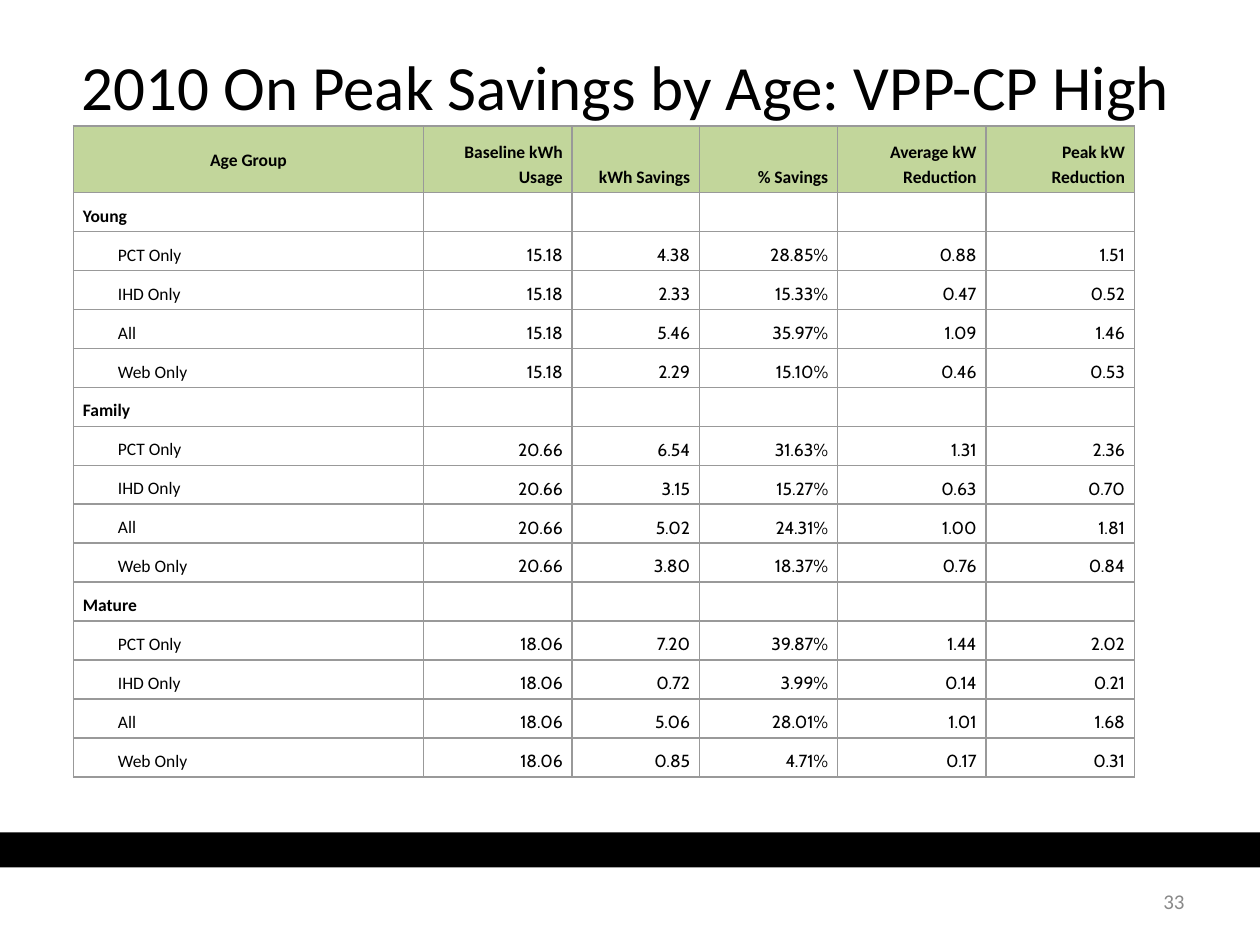
"""Build a slide with a table of on-peak savings by age group."""
from lxml import etree
from pptx import Presentation
from pptx.dml.color import RGBColor
from pptx.enum.shapes import MSO_SHAPE
from pptx.enum.text import MSO_ANCHOR, PP_ALIGN
from pptx.oxml.ns import qn
from pptx.util import Pt

LEFT, CENTER, RIGHT = PP_ALIGN.LEFT, PP_ALIGN.CENTER, PP_ALIGN.RIGHT
MIDDLE, BOTTOM = MSO_ANCHOR.MIDDLE, MSO_ANCHOR.BOTTOM
RECTANGLE = MSO_SHAPE.RECTANGLE
BLACK = RGBColor(0x00, 0x00, 0x00)
WHITE = RGBColor(0xFF, 0xFF, 0xFF)
GREEN = RGBColor(0xC2, 0xD6, 0x9B)
GRAY = RGBColor(0x89, 0x89, 0x89)
RULE = RGBColor(0x99, 0x99, 0x99)

TITLE = "2010 On Peak Savings by Age: VPP-CP High"
PAGE_NUMBER = "33"
HEADINGS = ["Age Group", "Baseline kWh Usage", "kWh Savings", "% Savings",
            "Average kW Reduction", "Peak kW Reduction"]
GROUPS = {
    "Young": [
        ("PCT Only", "15.18", "4.38", "28.85%", "0.88", "1.51"),
        ("IHD Only", "15.18", "2.33", "15.33%", "0.47", "0.52"),
        ("All", "15.18", "5.46", "35.97%", "1.09", "1.46"),
        ("Web Only", "15.18", "2.29", "15.10%", "0.46", "0.53"),
    ],
    "Family": [
        ("PCT Only", "20.66", "6.54", "31.63%", "1.31", "2.36"),
        ("IHD Only", "20.66", "3.15", "15.27%", "0.63", "0.70"),
        ("All", "20.66", "5.02", "24.31%", "1.00", "1.81"),
        ("Web Only", "20.66", "3.80", "18.37%", "0.76", "0.84"),
    ],
    "Mature": [
        ("PCT Only", "18.06", "7.20", "39.87%", "1.44", "2.02"),
        ("IHD Only", "18.06", "0.72", "3.99%", "0.14", "0.21"),
        ("All", "18.06", "5.06", "28.01%", "1.01", "1.68"),
        ("Web Only", "18.06", "0.85", "4.71%", "0.17", "0.31"),
    ],
}
COLUMN_WIDTHS = [199.9, 85, 72.8, 78.9, 84.8, 84.8]
HEADER_HEIGHT, ROW_HEIGHT = 38.1, 22.28
TEXT_SIZE = 10


def write(frame, text, size=TEXT_SIZE, font="Calibri", color=BLACK, bold=False,
          align=LEFT, spacing=None, after=None, indent=0):
    paragraph = frame.paragraphs[0]
    paragraph.alignment = align
    if spacing:
        paragraph.line_spacing = spacing
    if after:
        paragraph.space_after = Pt(after)
    if indent:
        properties = paragraph._p.get_or_add_pPr()
        properties.set("marL", str(Pt(indent)))
        properties.set("indent", "0")
    span = paragraph.add_run()
    span.text = text
    span.font.size = Pt(size)
    span.font.name = font
    span.font.bold = bold
    span.font.color.rgb = color


def add_rectangle(page, left, top, width, height, color):
    box = page.shapes.add_shape(RECTANGLE, Pt(left), Pt(top), Pt(width), Pt(height))
    box.shadow.inherit = False
    box.fill.solid()
    box.fill.fore_color.rgb = color
    box.line.fill.background()
    return box


def set_insets(frame, horizontal, vertical):
    frame.margin_left = frame.margin_right = Pt(horizontal)
    frame.margin_top = frame.margin_bottom = Pt(vertical)


def style_cell(cell, fill=None, anchor=BOTTOM):
    cell.vertical_anchor = anchor
    cell.margin_left = cell.margin_right = Pt(5.4)
    cell.margin_top = cell.margin_bottom = Pt(2.7)
    properties = cell._tc.get_or_add_tcPr()
    for side in ("a:lnL", "a:lnR", "a:lnT", "a:lnB"):
        border = etree.SubElement(properties, qn(side), w=str(Pt(1)))
        solid = etree.SubElement(border, qn("a:solidFill"))
        etree.SubElement(solid, qn("a:srgbClr"), val=str(RULE))
    if fill:
        cell.fill.solid()
        cell.fill.fore_color.rgb = fill
    else:
        cell.fill.background()


def add_savings_table(page):
    rows = []
    for group, savings in GROUPS.items():
        rows.append((group,) + ("",) * (len(HEADINGS) - 1))
        rows.extend(savings)
    height = HEADER_HEIGHT + ROW_HEIGHT * len(rows)
    table = page.shapes.add_table(len(rows) + 1, len(HEADINGS), Pt(42), Pt(72),
                                  Pt(sum(COLUMN_WIDTHS)), Pt(height)).table
    table.first_row = table.horz_banding = False
    for column, width in zip(table.columns, COLUMN_WIDTHS):
        column.width = Pt(width)
    for index, row in enumerate(table.rows):
        row.height = Pt(ROW_HEIGHT if index else HEADER_HEIGHT)

    for column, heading in enumerate(HEADINGS):
        cell = table.cell(0, column)
        style_cell(cell, GREEN, BOTTOM if column else MIDDLE)
        write(cell.text_frame, heading, bold=True, spacing=1.15,
              align=RIGHT if column else CENTER, after=None if column else 2)
    for index, values in enumerate(rows, start=1):
        is_group = values[0] in GROUPS
        for column, value in enumerate(values):
            cell = table.cell(index, column)
            style_cell(cell)
            if not value:
                ending = cell.text_frame.paragraphs[0]._p.get_or_add_endParaRPr()
                ending.set("sz", str(TEXT_SIZE * 100))
            elif column:
                write(cell.text_frame, value, font="Cabin", align=RIGHT, spacing=1.15)
            else:
                write(cell.text_frame, value, bold=is_group, spacing=1.15,
                      indent=0 if is_group else 20)


def main():
    deck = Presentation()
    deck.slide_width, deck.slide_height = Pt(720), Pt(540)
    page = deck.slides.add_slide(deck.slide_layouts[6])
    add_rectangle(page, 0, 475.7, 720, 20, BLACK)

    number = page.shapes.add_textbox(Pt(516), Pt(500.5), Pt(168), Pt(28.75)).text_frame
    number.word_wrap = True
    number.vertical_anchor = MIDDLE
    set_insets(number, 7.2, 3.6)
    write(number, PAGE_NUMBER, size=12, color=GRAY, align=RIGHT)

    title = add_rectangle(page, 31, 12.2, 653, 73.4, WHITE).text_frame
    title.word_wrap = True
    title.vertical_anchor = MIDDLE
    set_insets(title, 0, 0)
    write(title, TITLE, size=36, align=CENTER)

    add_savings_table(page)
    deck.save("out.pptx")


if __name__ == "__main__":
    main()
